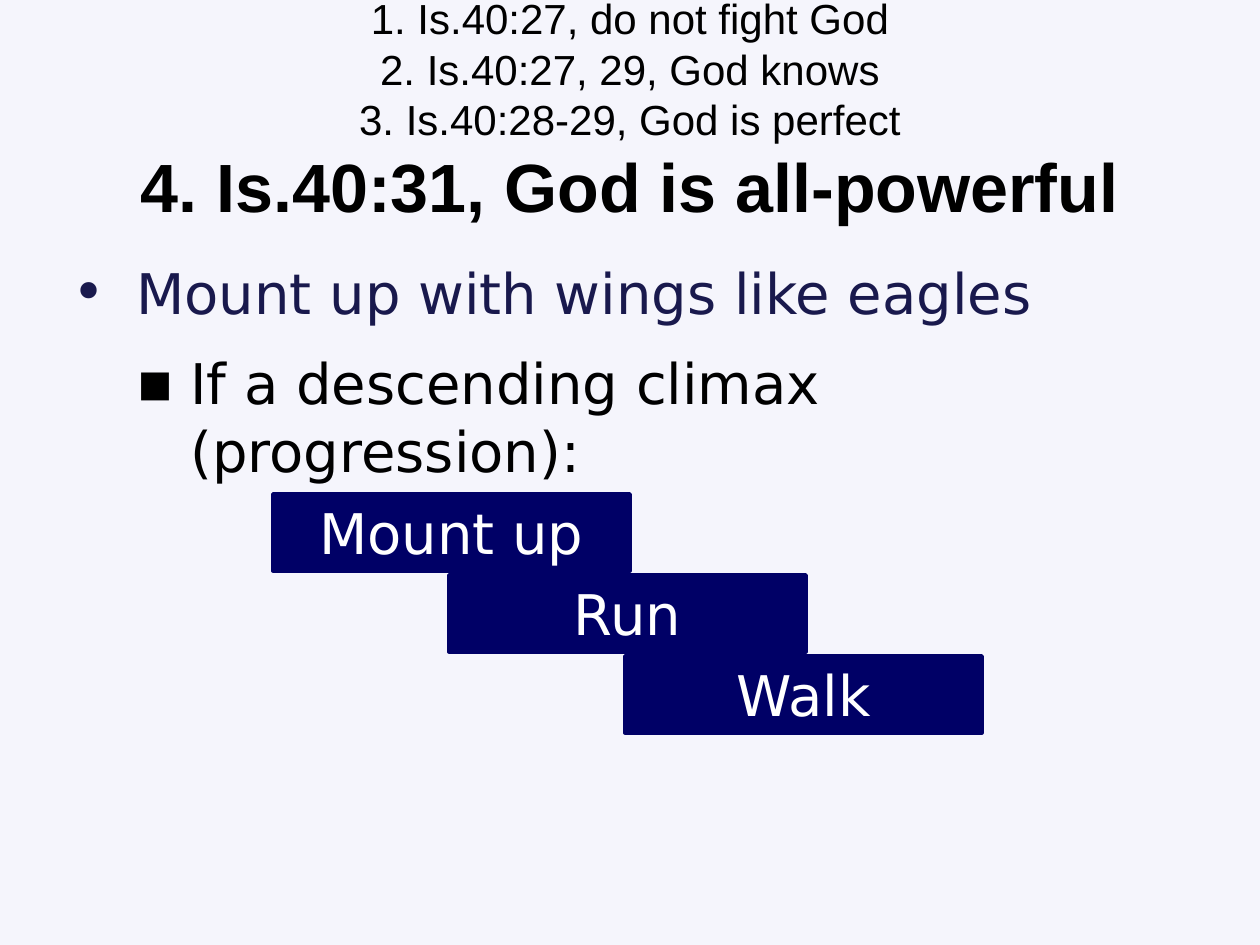
from lxml.etree import SubElement as Sub
from pptx import Presentation
from pptx.dml.color import RGBColor as RGB
from pptx.enum.shapes import MSO_SHAPE as Kind
from pptx.enum.text import MSO_ANCHOR as Anchor, PP_ALIGN as Align
from pptx.oxml.ns import qn
from pptx.util import Pt

PX = 914400 // 126
PALE = RGB(0xF5, 0xF5, 0xFC)
BLACK = RGB(0, 0, 0)
INK = RGB(0x19, 0x19, 0x4D)
NAVY = RGB(0, 0, 0x66)
WHITE = RGB(255, 255, 255)


def style(run, **form):
    for key, val in form.items():
        if key == "color":
            run.font.color.rgb = val
        else:
            setattr(run.font, key, val)


def scale(*px):
    return [n * PX for n in px]


deck = Presentation()
deck.slide_width, deck.slide_height = scale(1260, 945)
slide = deck.slides.add_slide(deck.slide_layouts[6])
back = slide.background.fill
back.solid()
back.fore_color.rgb = PALE

# Heading: three past points, then the current one
head = slide.shapes.add_textbox(*scale(63, 10, 1134, 199)).text_frame
head.word_wrap = True
head.vertical_anchor = Anchor.MIDDLE
para = head.paragraphs[0]
para.alignment = Align.CENTER
past = ["1. Is.40:27, do not fight God", "2. Is.40:27, 29, God knows",
        "3. Is.40:28-29, God is perfect"]
for text in past:
    run = para.add_run()
    run.text = text
    style(run, name="Arial", size=Pt(24), color=BLACK)
    para.add_line_break()
run = para.add_run()
run.text = "4. Is.40:31, God is all-powerful"
style(run, name="Arial", size=Pt(39), bold=True, color=BLACK)

# Bulleted body: text, level, colour, bullet, left margin, hanging indent
body = slide.shapes.add_textbox(*scale(60, 252, 1134, 630)).text_frame
body.word_wrap = True
points = [
    ("Mount up with wings like eagles", 0, INK, "•", 64, 64),
    ("If a descending climax (progression):", 1, BLACK, "▪", 118, 54),
]
for i, (text, level, color, mark, left, hang) in enumerate(points):
    para = body.add_paragraph() if i else body.paragraphs[0]
    para.level = level
    para.space_before, para.space_after = Pt(7.4), Pt(6)
    props = para._p.get_or_add_pPr()
    props.set("marL", str(left * PX))
    props.set("indent", str(-hang * PX))
    Sub(props, qn("a:buFont")).set("typeface", "DejaVu Sans")
    Sub(props, qn("a:buChar")).set("char", mark)
    run = para.add_run()
    run.text = text
    style(run, name="DejaVu Sans", size=Pt(32), color=color)

# Descending steps
for i, text in enumerate(["Mount up", "Run", "Walk"]):
    left, top = 273 + 176 * i, 494 + 81 * i
    step = slide.shapes.add_shape(Kind.RECTANGLE, *scale(left, top, 357, 77))
    step.shadow.inherit = False
    step.fill.solid()
    step.fill.fore_color.rgb = NAVY
    step.line.color.rgb = NAVY
    step.line.width = Pt(2)
    frame = step.text_frame
    frame.vertical_anchor = Anchor.MIDDLE
    para = frame.paragraphs[0]
    para.alignment = Align.CENTER
    run = para.add_run()
    run.text = text
    style(run, name="DejaVu Sans", size=Pt(32), color=WHITE)

deck.save("out.pptx")
